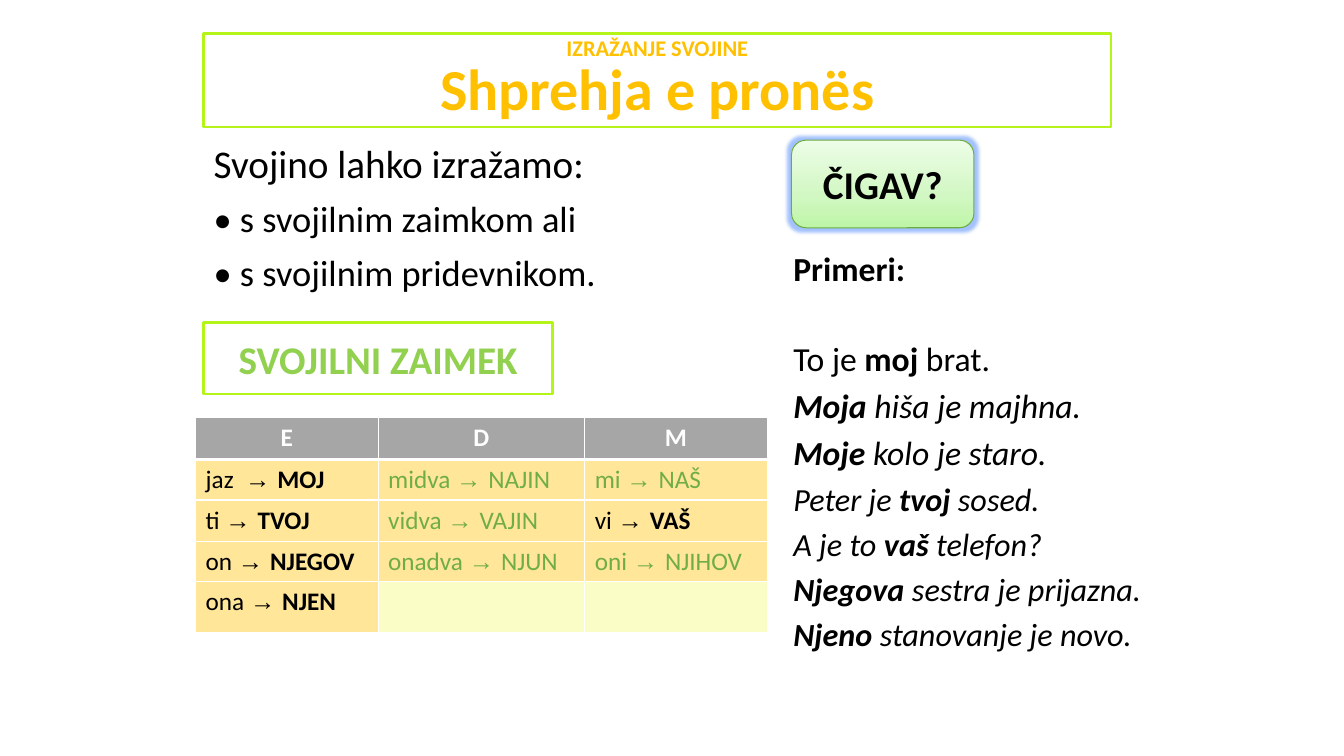
from dataclasses import dataclass

from pptx import Presentation
from pptx.dml.color import RGBColor
from pptx.enum.shapes import MSO_SHAPE as Shape
from pptx.enum.text import MSO_ANCHOR as Anchor, MSO_AUTO_SIZE as AutoSize, PP_ALIGN as Align
from pptx.oxml import parse_xml
from pptx.oxml.ns import nsdecls, qn
from pptx.util import Inches, Pt


@dataclass(frozen=True)
class Theme:
    font: str = "Calibri"
    arrow_font: str = "Arial"
    black: str = "000000"
    white: str = "FFFFFF"
    gold: str = "FFC000"
    lime: str = "92D050"
    frame: str = "B5F418"
    green: str = "70AD47"
    header: str = "A6A6A6"
    row: str = "FFE699"
    empty: str = "FAFEC6"
    button_line: str = "6DAC43"
    glow: str = "6699FF"
    button_stops: tuple = ((0, "BEF5A7"), (35, "D1F7C2"), (100, "EDFDE7"))
    title: float = 41.4
    subtitle: float = 16
    heading: float = 28
    bullet: float = 26
    example: float = 24
    small_example: float = 23
    table: float = 18


THEME = Theme()


@dataclass(frozen=True)
class Span:
    text: str
    size: float
    color: str = THEME.black
    bold: bool = False
    italic: bool = False
    font: str = THEME.font


@dataclass(frozen=True)
class Line:
    spans: tuple
    before: float = 0
    spacing: float = 1.0
    align: Align = Align.LEFT


@dataclass(frozen=True)
class Box:
    left: float
    top: float
    width: float
    height: float

    def lengths(self) -> tuple:
        return tuple(Inches(v) for v in (self.left, self.top, self.width, self.height))


@dataclass(frozen=True)
class Pronoun:
    person: str
    form: str
    key: bool = False


# Sentences: text before, the possessive, text after
EXAMPLES = (
    ("To je ", "moj", " brat."),
    ("", "Moja", " hiša je majhna."),
    ("", "Moje", " kolo je staro."),
    ("Peter je ", "tvoj", " sosed."),
    ("A je to ", "vaš", " telefon?"),
    ("", "Njegova", " sestra je prijazna."),
    ("", "Njeno", " stanovanje je novo."),
)
HEADERS = ("E", "D", "M")
PRONOUNS = (
    (Pronoun("jaz  ", "MOJ", True), Pronoun("midva ", "NAJIN"), Pronoun("mi ", "NAŠ")),
    (Pronoun("ti ", "TVOJ", True), Pronoun("vidva ", "VAJIN"), Pronoun("vi ", "VAŠ", True)),
    (Pronoun("on ", "NJEGOV", True), Pronoun("onadva ", "NJUN"), Pronoun("oni ", "NJIHOV")),
    (Pronoun("ona ", "NJEN", True), None, None),
)
COLUMN_WIDTHS = (1.81, 2.05, 1.81)
ROW_HEIGHTS = (0.42, 0.39, 0.41, 0.39, 0.51)


def rgb(color: str) -> RGBColor:
    return RGBColor.from_string(color)


def write(frame, lines) -> None:
    frame.word_wrap = True
    for index, line in enumerate(lines):
        para = frame.paragraphs[0] if index == 0 else frame.add_paragraph()
        para.alignment = line.align
        para.line_spacing = line.spacing
        para.space_before = Pt(line.before)
        for item in line.spans:
            span = para.add_run()
            span.text = item.text
            font = span.font
            font.name, font.size = item.font, Pt(item.size)
            font.bold, font.italic = item.bold, item.italic
            font.color.rgb = rgb(item.color)


def add_text(page, box: Box, lines) -> None:
    write(page.shapes.add_textbox(*box.lengths()).text_frame, lines)


def outline(shape, color: str, width: float) -> None:
    shape.line.color.rgb = rgb(color)
    shape.line.width = Pt(width)
    shape.text_frame.vertical_anchor = Anchor.MIDDLE


def frame_white(shape) -> None:
    shape.fill.solid()
    shape.fill.fore_color.rgb = rgb(THEME.white)
    outline(shape, THEME.frame, 2)


def add_button(page, box: Box, line: Line) -> None:
    button = page.shapes.add_shape(Shape.ROUNDED_RECTANGLE, *box.lengths())
    button.adjustments[0] = 0.167
    button.shadow.inherit = False
    button.fill.gradient()
    button.fill.gradient_angle = 90
    outline(button, THEME.button_line, 0.75)
    properties = button._element.spPr
    stops = properties.find(qn("a:gradFill")).find(qn("a:gsLst"))
    stops.clear()
    for place, color in THEME.button_stops:
        stops.append(parse_xml(f'<a:gs {nsdecls("a")} pos="{place * 1000}">'
                               f'<a:srgbClr val="{color}"/></a:gs>'))
    properties.find(qn("a:effectLst")).append(parse_xml(
        f'<a:glow {nsdecls("a")} rad="{Pt(5)}"><a:srgbClr val="{THEME.glow}">'
        '<a:alpha val="60000"/></a:srgbClr></a:glow>'))
    write(button.text_frame, [line])


def format_cell(cell, color: str, bottom: float, top: float) -> None:
    properties = cell._tc.get_or_add_tcPr()
    for side, width in (("L", 0.96), ("R", 0.96), ("T", top), ("B", bottom)):
        properties.append(parse_xml(
            f'<a:ln{side} {nsdecls("a")} w="{Pt(width)}"><a:solidFill>'
            f'<a:srgbClr val="{THEME.white}"/></a:solidFill></a:ln{side}>'))
    cell.fill.solid()
    cell.fill.fore_color.rgb = rgb(color)


def pronoun_line(item: Pronoun) -> Line:
    color = THEME.black if item.key else THEME.green
    return Line((Span(item.person, THEME.table, color),
                 Span("→ ", THEME.table, color, font=THEME.arrow_font),
                 Span(item.form, THEME.table, color, item.key)))


def add_pronoun_table(page, box: Box) -> None:
    table = page.shapes.add_table(len(ROW_HEIGHTS), len(COLUMN_WIDTHS), *box.lengths()).table
    for column, width in zip(table.columns, COLUMN_WIDTHS):
        column.width = Inches(width)
    for row, height in zip(table.rows, ROW_HEIGHTS):
        row.height = Inches(height)
    for column, text in enumerate(HEADERS):
        cell = table.cell(0, column)
        format_cell(cell, THEME.header, bottom=3, top=0.96)
        write(cell.text_frame,
              [Line((Span(text, THEME.table, THEME.white, True),), align=Align.CENTER)])
    for row, items in enumerate(PRONOUNS, start=1):
        for column, item in enumerate(items):
            cell = table.cell(row, column)
            format_cell(cell, THEME.row if item else THEME.empty,
                        bottom=0.96, top=3 if row == 1 else 0.96)
            if item:
                write(cell.text_frame, [pronoun_line(item)])


def example_lines() -> list:
    lines = [Line((Span("Primeri:", THEME.example, bold=True),))]
    for index, parts in enumerate(EXAMPLES):
        size = THEME.example if index < 3 else THEME.small_example
        spans = tuple(Span(text, size, bold=place == 1, italic=index > 0)
                      for place, text in enumerate(parts) if text)
        lines.append(Line(spans, before=35.7 if index == 0 else size / 5))
    return lines


def main() -> None:
    deck = Presentation()
    deck.slide_width, deck.slide_height = Inches(13.33), Inches(7.5)
    page = deck.slides.add_slide(deck.slide_layouts[5])

    # Title
    title = page.shapes.title
    title.left, title.top, title.width, title.height = Box(2.02, 0.33, 9, 0.93).lengths()
    frame_white(title)
    title.text_frame.auto_size = AutoSize.NONE
    write(title.text_frame, [
        Line((Span(text, size, THEME.gold, True),), spacing=0.9, align=Align.CENTER)
        for text, size in (("IZRAŽANJE SVOJINE", THEME.subtitle),
                           ("Shprehja e pronës", THEME.title))])

    # Ways to express possession
    add_text(page, Box(2.02, 1.39, 5.6, 1.57), [
        Line((Span(text, size),), before=10, spacing=0.9)
        for text, size in (("Svojino lahko izražamo:", THEME.heading),
                           ("• s svojilnim zaimkom ali", THEME.bullet),
                           ("• s svojilnim pridevnikom.", THEME.bullet))])

    # Possessive pronouns
    heading = page.shapes.add_shape(Shape.RECTANGLE, *Box(2.02, 3.2, 3.46, 0.71).lengths())
    heading.shadow.inherit = False
    frame_white(heading)
    write(heading.text_frame, [Line((Span("SVOJILNI ZAIMEK", THEME.heading, THEME.lime, True),),
                                    align=Align.CENTER)])
    add_pronoun_table(page, Box(1.94, 4.14, sum(COLUMN_WIDTHS), sum(ROW_HEIGHTS)))

    # Question and examples
    add_text(page, Box(7.77, 2.41, 3.7, 4.09), example_lines())
    add_button(page, Box(7.85, 1.39, 1.81, 0.87),
               Line((Span("ČIGAV?", THEME.heading, bold=True),), align=Align.CENTER))

    deck.save("out.pptx")


if __name__ == "__main__":
    main()
